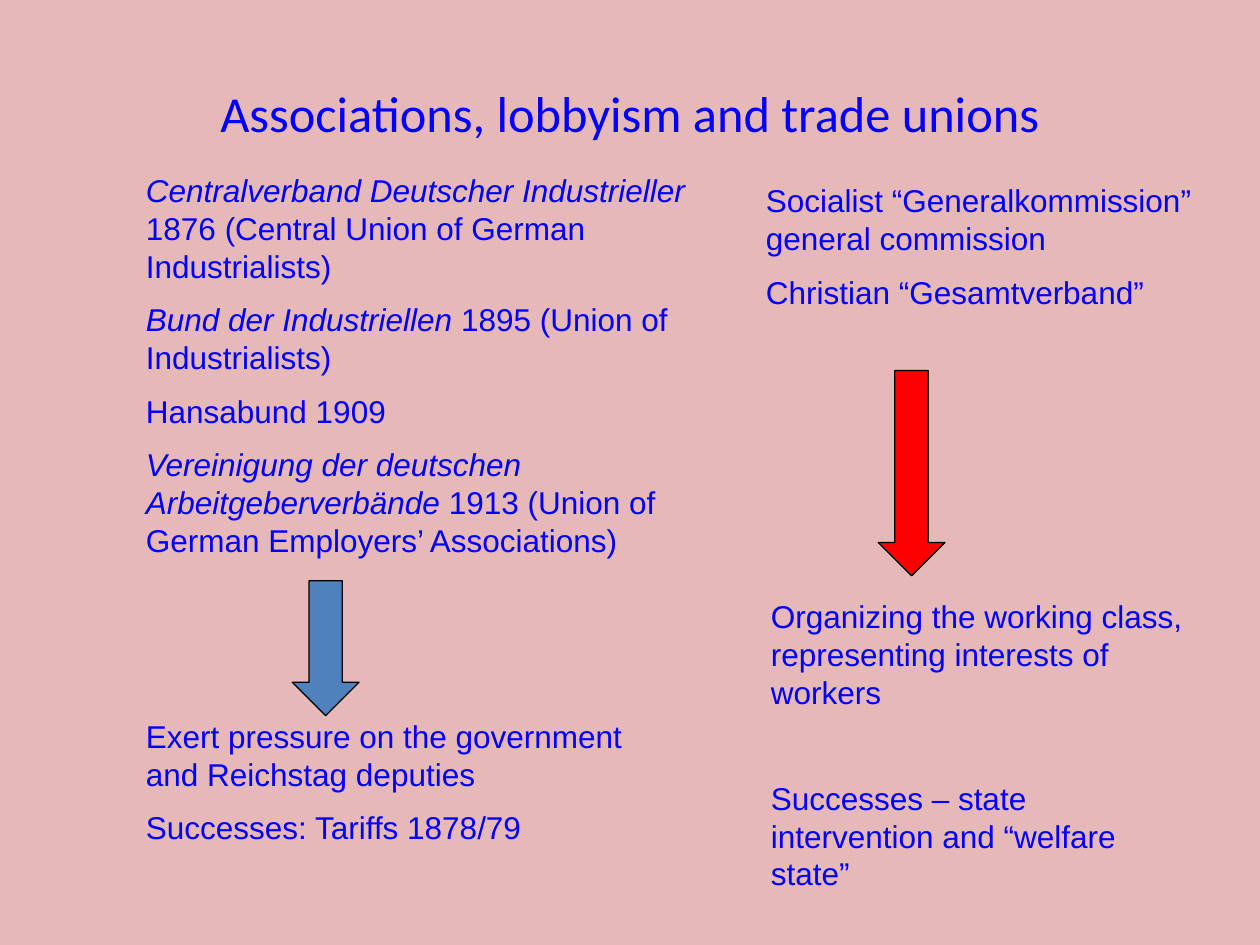
from pptx import Presentation
from pptx import util as u
from pptx.dml.color import RGBColor
from pptx.enum import shapes, text

COLUMNS, ROWS = 100, 75
BACKGROUND, BLUE, BLACK = "E6B9B8", "0000FF", "000000"
STEEL, RED = "4F81BD", "FF0000"


def colour(value):
    return RGBColor.from_string(value)


def apply(target, values):
    for name, value in values.items():
        setattr(target, name, value)


class Slide:
    body = {"name": "Arial", "size": u.Pt(18)}
    heading = {"name": "Calibri", "size": u.Pt(28.8)}
    gap = 9

    def __init__(self, deck):
        self.cell_width = deck.slide_width / COLUMNS
        self.cell_height = deck.slide_height / ROWS
        self.page = deck.slides.add_slide(deck.slide_layouts[5])
        self.fill(self.page.background, BACKGROUND)

    def fill(self, target, value):
        target.fill.solid()
        target.fill.fore_color.rgb = colour(value)

    def place(self, column, row, width, height):
        return (round(column * self.cell_width), round(row * self.cell_height),
                round(width * self.cell_width), round(height * self.cell_height))

    def add_words(self, para, words, style, italic=False):
        span = para.add_run()
        span.text = words
        apply(span.font, {**style, "italic": italic})
        span.font.color.rgb = colour(BLUE)

    def title(self, words, *area):
        box = self.page.shapes.title
        apply(box, dict(zip(("left", "top", "width", "height"), self.place(*area))))
        apply(box.text_frame, {"word_wrap": True, "vertical_anchor": text.MSO_ANCHOR.MIDDLE})
        para = box.text_frame.paragraphs[0]
        para.alignment = text.PP_ALIGN.CENTER
        self.add_words(para, words, self.heading)

    def text(self, paragraphs, *area, gap=gap):
        frame = self.page.shapes.add_textbox(*self.place(*area)).text_frame
        frame.word_wrap = True
        for index, (name, words) in enumerate(paragraphs):
            para = frame.add_paragraph() if index else frame.paragraphs[0]
            para.space_before = u.Pt(gap if index else 0)
            if name:
                self.add_words(para, name, self.body, italic=True)
            self.add_words(para, words, self.body)

    def arrow(self, value, *area):
        arrow = self.page.shapes.add_shape(shapes.MSO_SHAPE.DOWN_ARROW, *self.place(*area))
        arrow.shadow.inherit = False
        self.fill(arrow, value)
        arrow.line.color.rgb = colour(BLACK)
        arrow.line.width = u.Pt(0.75)


def main():
    deck = Presentation()
    apply(deck, {"slide_width": u.Inches(10), "slide_height": u.Inches(7.5)})
    slide = Slide(deck)
    slide.title("Associations, lobbyism and trade unions", 5, 2.7, 90, 12.5)
    slide.text([
        ("Centralverband Deutscher Industrieller ",
         "1876 (Central Union of German Industrialists)"),
        ("Bund der Industriellen", " 1895 (Union of Industrialists)"),
        ("", "Hansabund 1909"),
        ("Vereinigung der deutschen Arbeitgeberverbände ",
         "1913 (Union of German Employers’ Associations)"),
    ], 10.6, 13.1, 44.9, 32.6)
    slide.text([
        ("", "Socialist “Generalkommission” general commission"),
        ("", "Christian “Gesamtverband”"),
    ], 59.8, 13.9, 40.2, 16.2)
    slide.text([
        ("", "Exert pressure on the government and Reichstag deputies"),
        ("", "Successes: Tariffs 1878/79"),
    ], 10.6, 56.4, 40.2, 11.5)
    slide.text([
        ("", "Organizing the working class, representing interests of workers"),
        ("", "Successes – state intervention and “welfare state”"),
    ], 60.2, 46.9, 35.4, 25.2, gap=39)
    slide.arrow(STEEL, 23.2, 46.1, 5.3, 10.7)
    slide.arrow(RED, 69.7, 29.4, 5.3, 16.3)
    deck.save("out.pptx")


if __name__ == "__main__":
    main()
